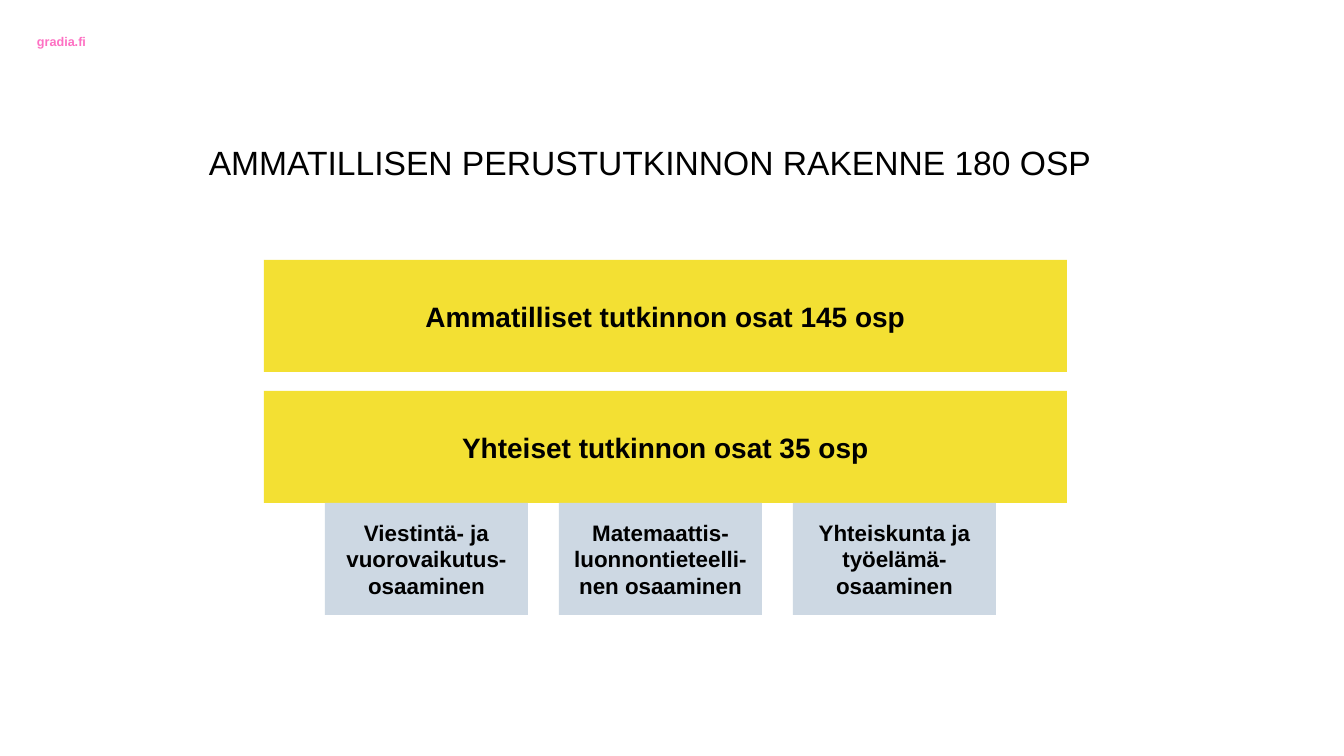
from pptx import Presentation
from pptx.dml.color import RGBColor
from pptx.enum.shapes import MSO_SHAPE
from pptx.enum.text import MSO_ANCHOR, PP_ALIGN
from pptx.util import Pt

PX = 914400 / 100.8
BLACK = RGBColor(0x00, 0x00, 0x00)
PINK = RGBColor(0xFE, 0x70, 0xC3)
YELLOW = RGBColor(0xF3, 0xE0, 0x33)
GREY = RGBColor(0xCD, 0xD8, 0xE3)

deck = Presentation()
deck.slide_width = round(1344 * PX)
deck.slide_height = round(756 * PX)
slide = deck.slides.add_slide(deck.slide_layouts[6])


def put(text, box, size, fill=None, bold=True, color=BLACK,
        align=PP_ALIGN.CENTER, anchor=MSO_ANCHOR.MIDDLE, inset=None):
    """Add text in a filled rectangle, or in a plain text box without a fill."""
    place = [round(n * PX) for n in box]
    if fill is None:
        shape = slide.shapes.add_textbox(*place)
    else:
        shape = slide.shapes.add_shape(MSO_SHAPE.RECTANGLE, *place)
        shape.shadow.inherit = False
        shape.fill.solid()
        shape.fill.fore_color.rgb = fill
        shape.line.fill.background()
    frame = shape.text_frame
    frame.word_wrap = True
    frame.vertical_anchor = anchor
    if inset is not None:
        frame.margin_left = frame.margin_right = inset
        frame.margin_top = frame.margin_bottom = inset
    para = frame.paragraphs[0]
    para.alignment = align
    run = para.add_run()
    run.text = text
    run.font.name = "Arial"
    run.font.size = Pt(size)
    run.font.bold = bold
    run.font.color.rgb = color


# Site address and title
put("gradia.fi", (37, 34, 85, 17), 9, color=PINK,
    align=PP_ALIGN.LEFT, anchor=MSO_ANCHOR.TOP, inset=0)
put("AMMATILLISEN PERUSTUTKINNON RAKENNE 180 OSP ",
    (92, 106, 1125, 112), 24, bold=False)

# Main parts of the degree
parts = ["Ammatilliset tutkinnon osat 145 osp", "Yhteiset tutkinnon osat 35 osp"]
for i, part in enumerate(parts):
    put(part, (264, 260 + 131 * i, 803, 112), 20, fill=YELLOW)

# Skill areas under the common part
skills = [
    "Viestintä- ja vuorovaikutus-osaaminen",
    "Matemaattis-luonnontieteelli-nen osaaminen",
    "Yhteiskunta ja työelämä-osaaminen",
]
for i, skill in enumerate(skills):
    put(skill, (325 + 234 * i, 503, 203, 112), 16, fill=GREY)

deck.save("out.pptx")
